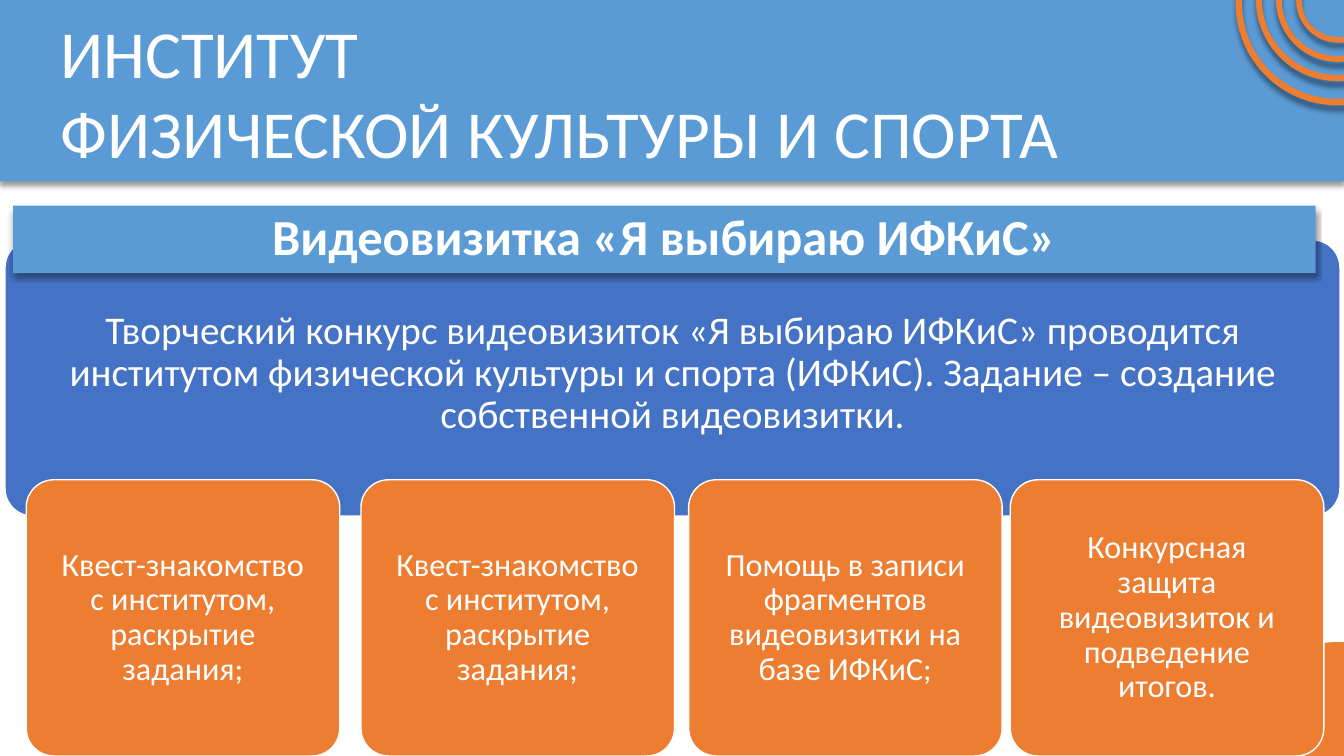
from lxml import etree
from pptx import Presentation, util as u
from pptx.dml.color import RGBColor
from pptx.enum import shapes, text
from pptx.oxml.ns import qn

BLUE, INDIGO, ORANGE, WHITE = "5B9BD5", "4472C4", "ED7D31", "FFFFFF"
MSO = shapes.MSO_SHAPE


def px(n):
    return u.Emu(n * 9144)


def rgb(value):
    return RGBColor.from_string(value)


class Deck:
    font = "Calibri"

    def __init__(self, width, height):
        self.prs = Presentation()
        self.prs.slide_width, self.prs.slide_height = px(width), px(height)
        self.s = self.prs.slides.add_slide(self.prs.slide_layouts[5])

    def paint(self, sp, fill, line=None, weight=1, shadow=None):
        sp.fill.solid()
        sp.fill.fore_color.rgb = rgb(fill)
        if line:
            sp.line.color.rgb = rgb(line)
            sp.line.width = u.Pt(weight)
        else:
            sp.line.fill.background()
        sp.shadow.inherit = False
        if shadow:
            alpha, blur, dist = shadow
            effects = sp._element.spPr.find(qn("a:effectLst"))
            outer = etree.SubElement(effects, qn("a:outerShdw"), blurRad=str(u.Pt(blur)),
                                     dist=str(u.Pt(dist)), dir="5400000", rotWithShape="0")
            clr = etree.SubElement(outer, qn("a:srgbClr"), val="000000")
            etree.SubElement(clr, qn("a:alpha"), val=str(alpha * 1000))

    def shape(self, kind, box, fill, adj=None, **style):
        sp = self.s.shapes.add_shape(kind, *map(px, box))
        if adj is not None:
            sp.adjustments[0] = adj
        self.paint(sp, fill, **style)
        return sp

    def label(self, sp, words, size, insets=(10, 5, 10, 5), bold=False, centred=True):
        tf = sp.text_frame
        tf.text = words
        tf.word_wrap = True
        tf.auto_size = text.MSO_AUTO_SIZE.NONE
        tf.margin_left, tf.margin_top, tf.margin_right, tf.margin_bottom = map(px, insets)
        tf.vertical_anchor = text.MSO_ANCHOR.MIDDLE if centred else text.MSO_ANCHOR.TOP
        for p in tf.paragraphs:
            p.alignment = text.PP_ALIGN.CENTER if centred else text.PP_ALIGN.LEFT
            p.line_spacing = 0.9 if centred else 1.0
            for r in p.runs:
                r.font.name, r.font.size, r.font.bold = self.font, u.Pt(size), bold
                r.font.color.rgb = rgb(WHITE)

    def textbox(self, box, words, size):
        sp = self.s.shapes.add_textbox(*map(px, box))
        self.label(sp, words, size, centred=False)

    def title(self, box, words, size):
        sp = self.s.shapes.title
        sp.left, sp.top, sp.width, sp.height = map(px, box)
        self.s.shapes._spTree.append(sp._element)
        self.paint(sp, BLUE, shadow=(40, 4, 3))
        self.label(sp, words, size, bold=True)

    def panel(self, box, fill, words, size, insets):
        sp = self.shape(MSO.ROUNDED_RECTANGLE, box, fill, 0.1, line=WHITE)
        self.label(sp, words, size, insets)


def main():
    d = Deck(1333, 750)
    d.shape(MSO.RECTANGLE, (0, 0, 1333, 180), BLUE, shadow=(40, 4, 3))
    d.shape(MSO.OVAL, (1228, 637, 197, 197), ORANGE)
    for i, (top, size) in enumerate([(-95, 197), (-79, 157), (-59, 118), (-39, 79)]):
        d.shape(MSO.DONUT, (1228 + 20 * i, top, size, size), ORANGE, 0.008,
                line=ORANGE, weight=3.5, shadow=(43, 4, 4))
    d.textbox((50, 6, 1023, 172), "ИНСТИТУТ\nФИЗИЧЕСКОЙ КУЛЬТУРЫ И СПОРТА", 48)

    d.panel((5, 238, 1324, 274), INDIGO,
            "Творческий конкурс видеовизиток «Я выбираю ИФКиС» проводится институтом "
            "физической культуры и спорта (ИФКиС). Задание – создание собственной видеовизитки.",
            28, (23, 15, 23, 23))
    d.title((13, 204, 1292, 67), "Видеовизитка «Я выбираю ИФКиС»", 36)

    quest = "Квест-знакомство с институтом, раскрытие задания;"
    stages = [
        (26, quest),
        (358, quest),
        (683, "Помощь в записи фрагментов видеовизитки на базе ИФКиС;"),
        (1002, "Конкурсная защита видеовизиток и подведение итогов."),
    ]
    for left, words in stages:
        d.panel((left, 476, 311, 274), ORANGE, words, 23, (18, 18, 18, 18))
    d.prs.save("out.pptx")


if __name__ == "__main__":
    main()
